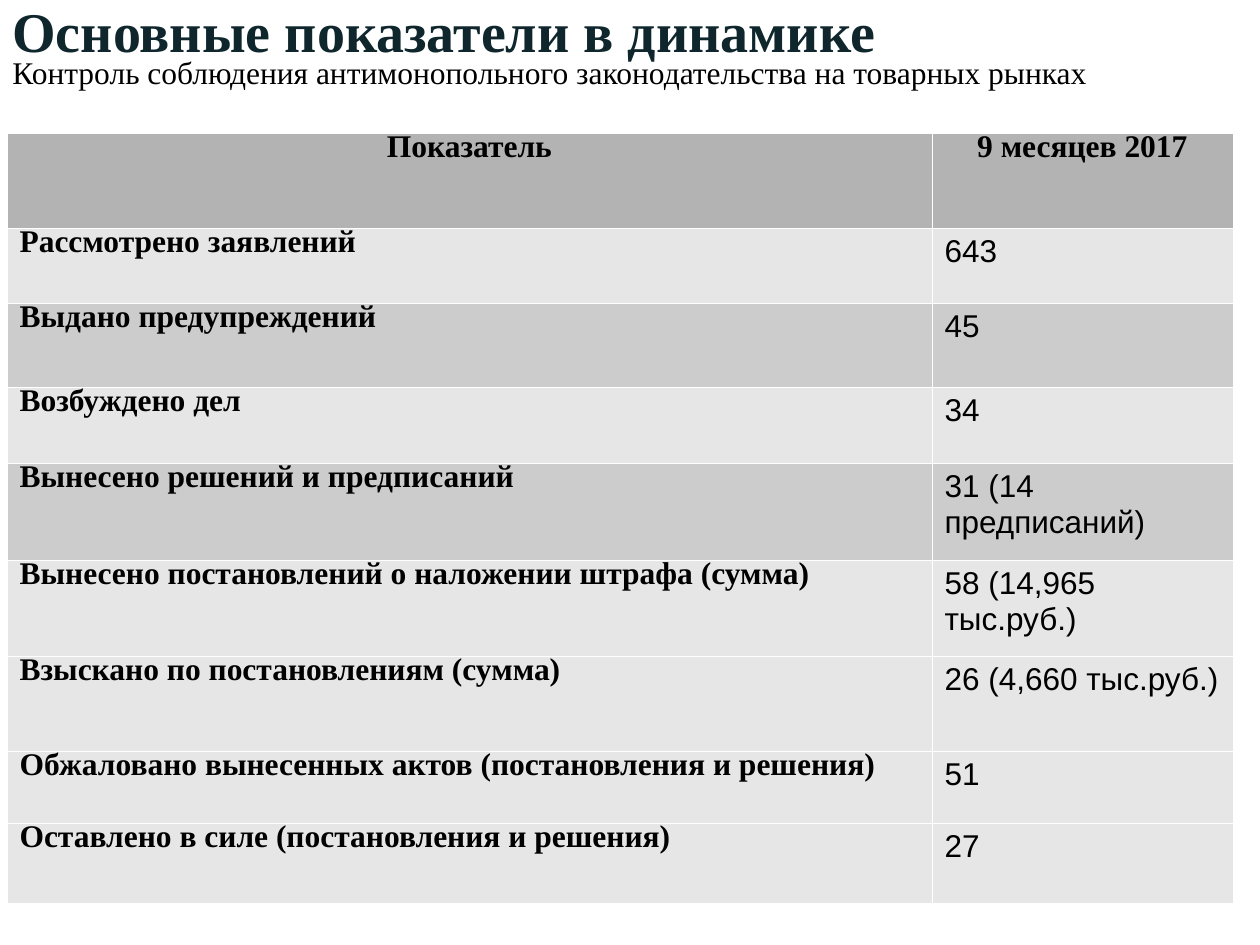
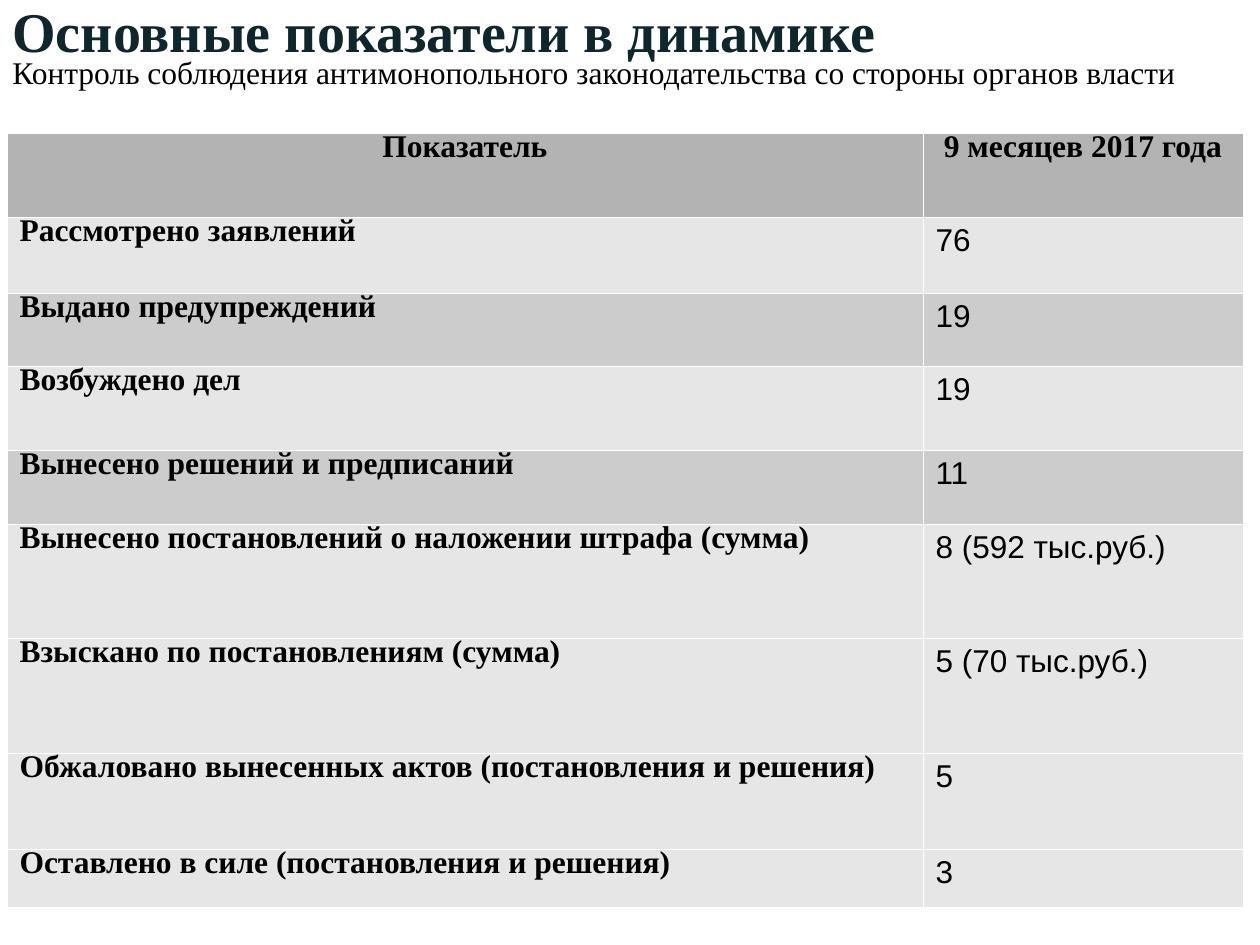
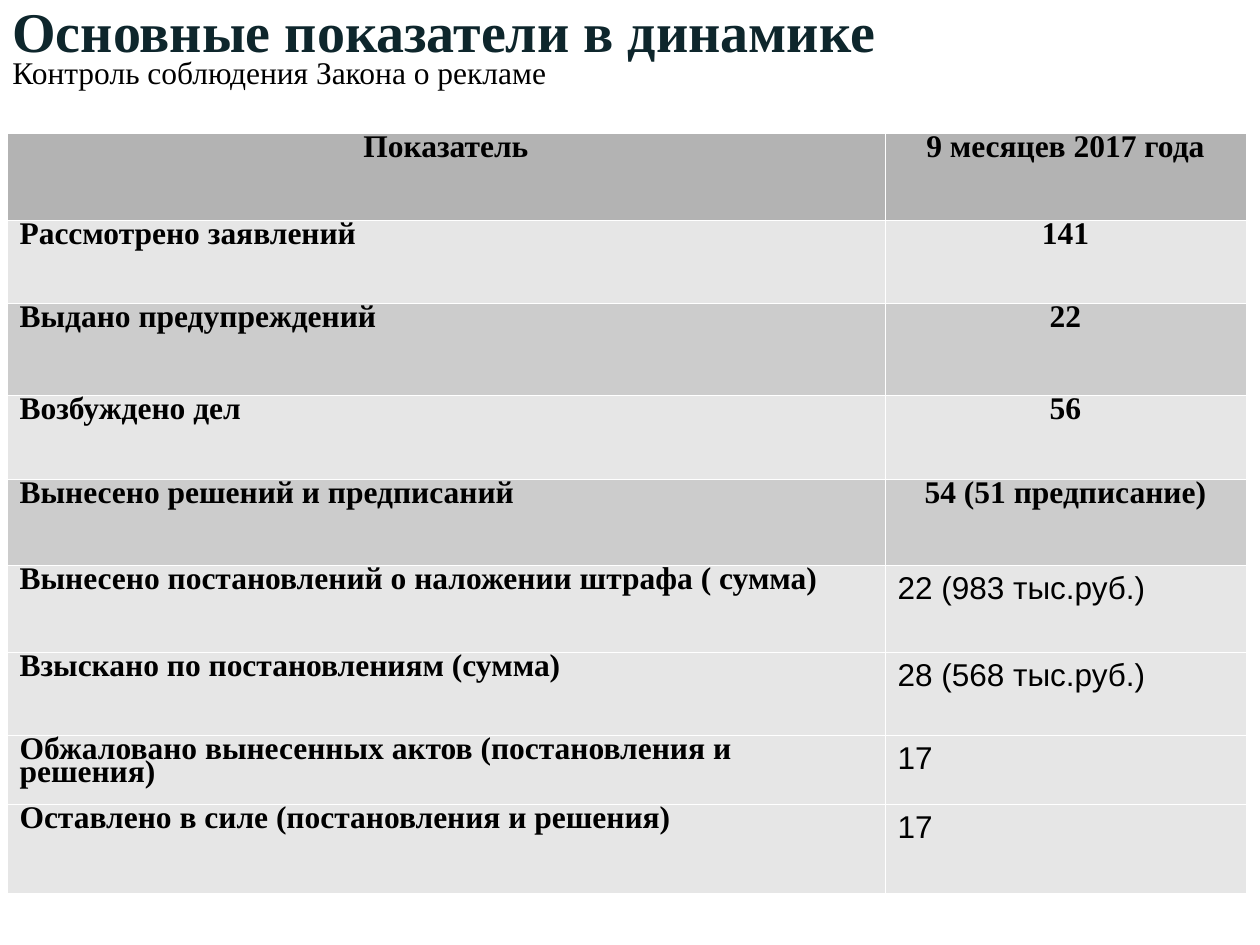
from dataclasses import dataclass

from lxml import etree
from pptx import Presentation
from pptx import util as u
from pptx.dml.color import RGBColor
from pptx.enum import text
from pptx.oxml import ns


@dataclass(frozen=True)
class Theme:
    title: str = "0E262C"
    ink: str = "000000"
    header: str = "B3B3B3"
    light: str = "E6E6E6"
    dark: str = "CCCCCC"
    border: str = "FFFFFF"
    serif: str = "Times New Roman"
    sans: str = "Arial"
    title_size: int = 32
    body_size: int = 18
    title_spacing: float = 0.9
    tight_spacing: float = 0.66
    border_emu: int = 762


THEME = Theme()
PX_PER_INCH = 126
TITLE = "Основные показатели в динамике"
FINES = "Вынесено постановлений о наложении штрафа (сумма)"
INDICATORS = [
    "Рассмотрено заявлений",
    "Выдано предупреждений",
    "Возбуждено дел",
    "Вынесено решений и предписаний",
    FINES,
    "Взыскано по постановлениям (сумма)",
    "Обжаловано вынесенных актов (постановления и решения)",
    "Оставлено в силе (постановления и решения)",
]
DARK_ROWS = (2, 4)


@dataclass(frozen=True)
class Report:
    subject: str
    period: str
    values: list
    columns: tuple
    rows: list
    indicators: list
    centred_values: int = 0


REPORTS = [
    Report(
        "Контроль соблюдения антимонопольного законодательства на товарных рынках",
        "9 месяцев 2017",
        ["643", "45", "34", "31 (14 предписаний)", "58 (14,965 тыс.руб.)",
         "26 (4,660 тыс.руб.)", "51", "27"],
        (925, 301),
        [95, 75, 84, 76, 97, 96, 95, 72, 80],
        INDICATORS,
    ),
    Report(
        "Контроль соблюдения антимонопольного законодательства со стороны органов власти",
        "9 месяцев 2017 года",
        ["76", "19", "19", "11", "8 (592 тыс.руб.)", "5 (70 тыс.руб.)", "5", "3"],
        (916, 320),
        [84, 76, 73, 84, 74, 114, 115, 96, 58],
        INDICATORS,
    ),
    Report(
        "Контроль соблюдения Закона о рекламе",
        "9 месяцев 2017 года",
        ["141", "22", "56", "54 (51 предписание)", "22 (983 тыс.руб.)",
         "28 (568 тыс.руб.)", "17", "17"],
        (878, 361),
        [87, 83, 92, 84, 86, 87, 83, 69, 89],
        [name.replace("(сумма)", "( сумма)") if name == FINES else name
         for name in INDICATORS],
        centred_values=4,
    ),
]


def px(length):
    return u.Emu(round(length * u.Inches(1) / PX_PER_INCH))


def write(paragraph, words, size=THEME.body_size, color=THEME.ink, face=THEME.serif,
          bold=True, spacing=THEME.tight_spacing, centred=False):
    paragraph.text = words
    paragraph.line_spacing = spacing
    paragraph.alignment = text.PP_ALIGN.CENTER if centred else text.PP_ALIGN.LEFT
    font = paragraph.runs[0].font
    font.size = u.Pt(size)
    font.name = face
    font.bold = bold
    font.color.rgb = RGBColor.from_string(color)


def add_heading(slide, subject):
    left, top, right, bottom = px(0), px(5), px(1259), px(88)
    outline = slide.shapes.build_freeform(left, top)
    outline.add_line_segments([(right, top), (right, bottom), (left, bottom)], close=True)
    heading = outline.convert_to_shape()
    heading.shadow.inherit = False
    heading.fill.background()
    heading.line.fill.background()
    frame = heading.text_frame
    frame.word_wrap = True
    frame.vertical_anchor = text.MSO_ANCHOR.MIDDLE
    write(frame.paragraphs[0], TITLE, size=THEME.title_size, color=THEME.title,
          spacing=THEME.title_spacing)
    write(frame.add_paragraph(), subject, bold=False)


def paint_cell(cell, fill):
    """Outline all four sides of the cell, then fill it."""
    properties = cell._tc.get_or_add_tcPr()
    for side in ("a:lnL", "a:lnR", "a:lnT", "a:lnB"):
        line = etree.SubElement(properties, ns.qn(side), w=str(THEME.border_emu))
        solid = etree.SubElement(line, ns.qn("a:solidFill"))
        etree.SubElement(solid, ns.qn("a:srgbClr"), val=THEME.border)
    cell.fill.solid()
    cell.fill.fore_color.rgb = RGBColor.from_string(fill)


def row_fill(row):
    if row == 0:
        return THEME.header
    return THEME.dark if row in DARK_ROWS else THEME.light


def add_indicators(slide, report):
    table = slide.shapes.add_table(
        len(report.rows), len(report.columns), px(7), px(133),
        px(sum(report.columns)), px(sum(report.rows))).table
    table.first_row = table.horz_banding = False
    for column, width in zip(table.columns, report.columns):
        column.width = px(width)
    for row, height in zip(table.rows, report.rows):
        row.height = px(height)

    lines = zip(["Показатель"] + report.indicators, [report.period] + report.values)
    for row, (indicator, value) in enumerate(lines):
        name_cell, value_cell = table.cell(row, 0), table.cell(row, 1)
        for cell in (name_cell, value_cell):
            paint_cell(cell, row_fill(row))
        write(name_cell.text_frame.paragraphs[0], indicator, centred=row == 0)
        value_line = value_cell.text_frame.paragraphs[0]
        if row <= report.centred_values:
            write(value_line, value, centred=True)
        else:
            write(value_line, value, face=THEME.sans, bold=False, spacing=1.0)


def main():
    deck = Presentation()
    deck.slide_width, deck.slide_height = px(1260), px(945)
    blank = deck.slide_layouts[6]
    for report in REPORTS:
        slide = deck.slides.add_slide(blank)
        add_heading(slide, report.subject)
        add_indicators(slide, report)
    deck.save("out.pptx")


if __name__ == "__main__":
    main()
